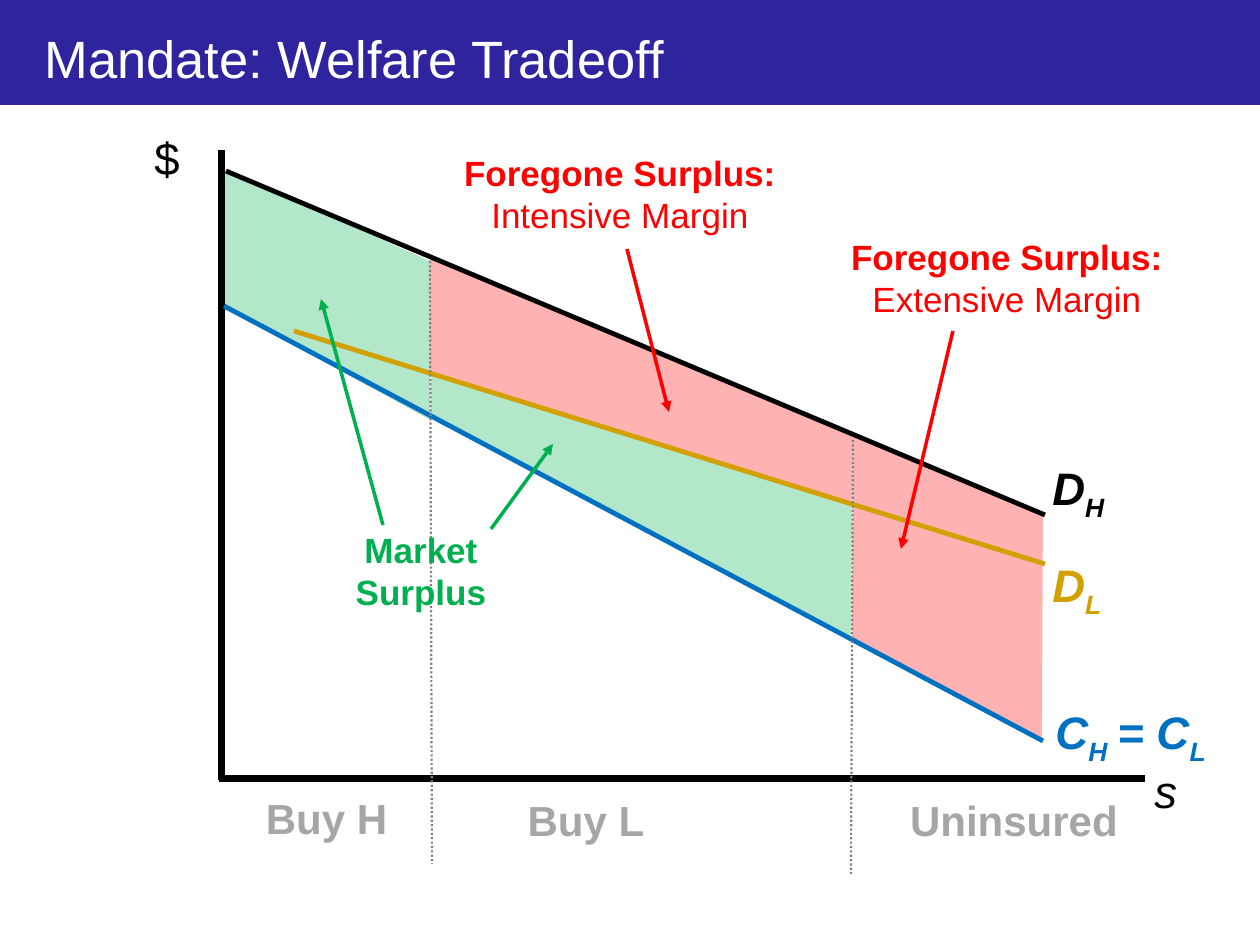
from lxml import etree
from pptx import Presentation, util as u
from pptx.dml.color import RGBColor
from pptx.enum import dml, shapes, text
from pptx.oxml.ns import qn

PX = 914400 // 126  # EMU per px
FONT = "Arial"

NAVY = RGBColor(0x2E, 0x24, 0x9E)
WHITE = RGBColor(0xFF, 0xFF, 0xFF)
BLACK = RGBColor(0, 0, 0)
RED = RGBColor(0xFF, 0, 0)
GREEN = RGBColor(0, 0xB0, 0x50)
GOLD = RGBColor(0xD2, 0xA0, 0)
BLUE = RGBColor(0, 0x70, 0xC0)
GREY = RGBColor(0x80, 0x80, 0x80)
LIGHT_GREY = RGBColor(0xA6, 0xA6, 0xA6)

TITLE = "Mandate: Welfare Tradeoff"

# Shaded surplus areas: colour, corners
AREAS = [
    (RED, [(852, 640), (853, 436), (1043, 515), (1042, 741)]),
    (RED, [(852, 504), (853, 435), (430, 256), (430, 373)]),
    (GREEN, [(851, 639), (852, 505), (431, 374), (431, 416)]),
    (GREEN, [(223, 170), (430, 261), (430, 420), (221, 305)]),
]

# Line styles: width in points, dotted, arrowhead
AXIS, CURVE = (4, False, False), (2.75, False, False)
DIVIDER, ARROW = (1.25, True, False), (2, False, True)

# Lines: style, colour, start, end
LINES = [
    (AXIS, BLACK, (222, 150), (222, 780)),
    (AXIS, BLACK, (1145, 779), (219, 779)),
    (CURVE, BLACK, (1045, 515), (226, 171)),
    (CURVE, GOLD, (1045, 564), (294, 331)),
    (CURVE, BLUE, (1043, 741), (224, 306)),
    (DIVIDER, GREY, (853, 440), (851, 874)),
    (DIVIDER, GREY, (430, 261), (432, 864)),
    (ARROW, GREEN, (383, 525), (321, 299)),
    (ARROW, GREEN, (491, 529), (553, 444)),
    (ARROW, RED, (627, 249), (669, 412)),
    (ARROW, RED, (953, 331), (901, 549)),
]

# Axis labels: text, italic, box
AXIS_LABELS = [
    ("$", False, (142, 120, 82, 103)),
    ("s", True, (1142, 753, 97, 103)),
]

# Curve labels: text, subscript, colour, box
CURVE_LABELS = [
    ("D", "H", BLACK, (1040, 454, 126, 68)),
    ("D", "L", GOLD, (1040, 551, 111, 68)),
    ("C", "H", BLUE, (1043, 698, 97, 68)),
    ("= C", "L", BLUE, (1105, 698, 127, 68)),
]

# Centred labels: bold text, plain text, size, colour, box
CENTRED_LABELS = [
    ("Buy H", "", 24, LIGHT_GREY, (223, 786, 207, 63)),
    ("Buy L", "", 24, LIGHT_GREY, (431, 788, 310, 63)),
    ("Uninsured", "", 24, LIGHT_GREY, (856, 788, 316, 63)),
    ("Market Surplus", "", 20, GREEN, (307, 522, 228, 97)),
    ("Foregone Surplus: ", "Intensive Margin", 20, RED, (436, 145, 368, 97)),
    ("Foregone Surplus: ", "Extensive Margin", 20, RED, (823, 229, 368, 97)),
]


def emu(values):
    return [value * PX for value in values]


def fill_shape(shape, colour):
    shape.fill.solid()
    shape.fill.fore_color.rgb = colour
    shape.line.fill.background()
    shape.shadow.inherit = False


def add_area(slide, colour, corners):
    builder = slide.shapes.build_freeform(*corners[0], scale=PX)
    builder.add_line_segments(corners[1:], close=True)
    shape = builder.convert_to_shape()
    fill_shape(shape, colour)
    solid = shape._element.spPr.find(qn("a:solidFill"))
    etree.SubElement(solid[0], qn("a:alpha"), val="30000")


def add_line(slide, style, colour, start, end):
    width, dotted, arrow = style
    connector = slide.shapes.add_connector(
        shapes.MSO_CONNECTOR.STRAIGHT, *emu(start + end))
    connector.line.width = u.Pt(width)
    connector.line.color.rgb = colour
    if dotted:
        connector.line.dash_style = dml.MSO_LINE.ROUND_DOT
    if arrow:
        etree.SubElement(connector.line._get_or_add_ln(), qn("a:tailEnd"), type="triangle")
    etree.SubElement(connector._element.spPr, qn("a:effectLst"))


def add_text(slide, box, size, colour, words=""):
    frame = slide.shapes.add_textbox(*emu(box)).text_frame
    frame.word_wrap = True
    paragraph = frame.paragraphs[0]
    paragraph.text = words
    paragraph.font.name = FONT
    paragraph.font.size = u.Pt(size)
    paragraph.font.color.rgb = colour
    return paragraph, frame


def add_run(paragraph, words):
    run = paragraph.add_run()
    run.text = words
    return run


def main():
    presentation = Presentation()
    presentation.slide_width, presentation.slide_height = emu((1260, 945))
    slide = presentation.slides.add_slide(presentation.slide_layouts[6])

    # Title band
    band = slide.shapes.add_shape(shapes.MSO_SHAPE.RECTANGLE, *emu((0, 0, 1260, 105)))
    fill_shape(band, NAVY)
    _, frame = add_text(slide, (32, 21, 1207, 73), 30, WHITE, TITLE)
    frame.vertical_anchor = text.MSO_ANCHOR.MIDDLE

    # Diagram
    for area in AREAS:
        add_area(slide, *area)
    for line in LINES:
        add_line(slide, *line)

    # Labels
    for words, italic, box in AXIS_LABELS:
        paragraph, _ = add_text(slide, box, 26, BLACK, words)
        paragraph.font.italic = italic
        paragraph.line_spacing = 1.07
        paragraph.space_after = u.Pt(8)
    for words, subscript, colour, box in CURVE_LABELS:
        paragraph, _ = add_text(slide, box, 26, colour, words)
        paragraph.font.bold = paragraph.font.italic = True
        run = add_run(paragraph, subscript)
        run._r.get_or_add_rPr().set("baseline", "-25000")
    for bold, plain, size, colour, box in CENTRED_LABELS:
        paragraph, _ = add_text(slide, box, size, colour, bold)
        paragraph.alignment = text.PP_ALIGN.CENTER
        paragraph.font.bold = True
        if plain:
            add_run(paragraph, plain).font.bold = False

    presentation.save("out.pptx")


if __name__ == "__main__":
    main()
